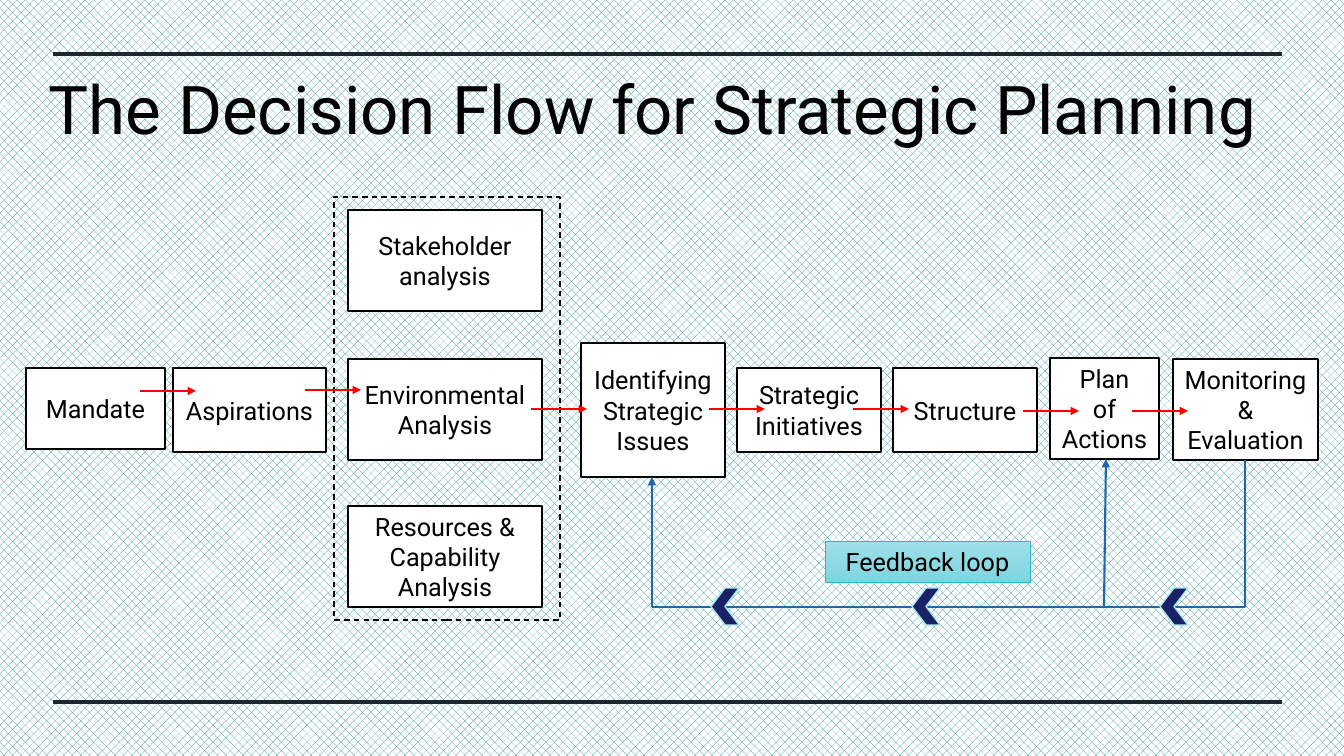
from typing import NamedTuple

from lxml.etree import SubElement
from pptx import Presentation
from pptx.dml.color import RGBColor
from pptx.enum.dml import MSO_LINE_DASH_STYLE as Dash, MSO_PATTERN_TYPE as Pattern
from pptx.enum.shapes import MSO_CONNECTOR_TYPE as Link, MSO_AUTO_SHAPE_TYPE as Preset
from pptx.enum.text import MSO_VERTICAL_ANCHOR as Anchor, PP_PARAGRAPH_ALIGNMENT as Align
from pptx.oxml.ns import qn
from pptx.util import Pt

SCALE = 914400 / 100.8  # EMU per px
FONT = "Roboto"
COLORS = {
    "ink": "000000", "paper": "FFFFFF", "hatch": "1C8B95", "rule": "1C2732",
    "flow": "FF0000", "loop": "2166AB", "chevron": "1A2166", "chevron_edge": "A3E8EE",
    "label_top": "9FDFE8", "label_bottom": "7ED5E1", "label_edge": "25BAC7",
}


class Box(NamedTuple):
    left: int
    top: int
    width: int
    height: int

    def inner(self, left, top, width, height):
        return Box(self.left + left, self.top + top, width, height)


def emu(*lengths):
    return [round(length * SCALE) for length in lengths]


def color(name):
    return RGBColor.from_string(COLORS[name])


def set_text(frame, lines, size, align):
    frame.word_wrap = True
    frame.text = "\n".join(lines)
    for para in frame.paragraphs:
        para.alignment = align
        para.font.name, para.font.size = FONT, Pt(size)
        para.font.color.rgb = color("ink")


def add_block(page, box, edge, fill=None, preset=Preset.RECTANGLE, weight=1):
    shape = page.shapes.add_shape(preset, *emu(*box))
    shape.shadow.inherit = False
    shape.line.color.rgb, shape.line.width = color(edge), Pt(weight)
    if fill:
        shape.fill.solid()
        shape.fill.fore_color.rgb = color(fill)
    else:
        shape.fill.background()
    return shape


def add_line(page, start, end, stroke, weight, arrow=False, kind=Link.STRAIGHT):
    line = page.shapes.add_connector(kind, *emu(*start, *end))
    line.line.color.rgb, line.line.width = color(stroke), Pt(weight)
    properties = line._element.spPr
    if arrow:
        SubElement(properties.find(qn("a:ln")), qn("a:tailEnd"), type="triangle")
    SubElement(properties, qn("a:effectLst"))
    return line


def add_step(page, box, *lines):
    shape = add_block(page, box, "ink", "paper")
    shape.text_frame.vertical_anchor = Anchor.MIDDLE
    set_text(shape.text_frame, lines, 18, Align.CENTER)


def draw_frame(page, box):
    """Hatched background and the rules above and below the content."""
    fill = page.background.fill
    fill.patterned()
    fill.pattern = Pattern.from_xml("pct40")
    fill.fore_color.rgb, fill.back_color.rgb = color("hatch"), color("paper")
    for y in (box.top, box.top + box.height):
        add_line(page, (box.left, y), (box.left + box.width, y), "rule", 2.25)


def draw_title(page, box):
    title = page.shapes.add_textbox(*emu(*box))
    set_text(title.text_frame, ["The Decision Flow for Strategic Planning"], 48, Align.LEFT)


def draw_analyses(page, box):
    """Dashed panel around the three analyses."""
    analyses = [
        (13, ["Stakeholder analysis"]),
        (162, ["Environmental Analysis"]),
        (309, ["Resources &", "Capability Analysis"]),
    ]
    for top, lines in analyses:
        add_step(page, box.inner(14, top, 194, 101), *lines)
    add_block(page, box, "ink").line.dash_style = Dash.DASH


def draw_steps(page, box):
    """Single steps on both sides of the analyses."""
    steps = [
        (0, 25, 139, 81, ["Mandate"]),
        (147, 25, 153, 84, ["Aspirations"]),
        (555, 0, 144, 134, ["Identifying Strategic Issues"]),
        (711, 25, 144, 84, ["Strategic Initiatives"]),
        (867, 25, 144, 84, ["Structure"]),
        (1024, 15, 109, 101, ["Plan", "of", "Actions"]),
        (1147, 16, 145, 101, ["Monitoring", "&", "Evaluation"]),
    ]
    for *place, lines in steps:
        add_step(page, box.inner(*place), *lines)


def draw_flow_arrows(page, box):
    length = 56
    arrows = [(114, 48), (279, 47), (505, 66), (683, 66), (827, 66), (997, 68), (1106, 68)]
    for left, top in arrows:
        x, y = box.left + left, box.top + top
        add_line(page, (x, y), (x + length, y), "flow", 1.5, arrow=True)


def draw_feedback_loop(page, box):
    left, top, width, height = box
    bottom = top + height

    # Elbow down and left: a two-leg bend laid out upright, then turned by 90 degrees
    corner_x = left + (width - height) / 2
    corner_y = top + (height - width) / 2
    elbow = add_line(page, (corner_x, corner_y), (corner_x + height, corner_y + width),
                     "loop", 1.75, kind=Link.ELBOW)
    properties = elbow._element.spPr
    properties.find(qn("a:prstGeom")).set("prst", "bentConnector2")
    properties.find(qn("a:xfrm")).set("rot", str(90 * 60000))

    # Returns to the issues and to the plan
    add_line(page, (left, bottom), (left, top + 17), "loop", 1.5, arrow=True)
    add_line(page, (left + 452, bottom), (left + 454, top - 1), "loop", 1.5, arrow=True)

    # Label
    label = add_block(page, box.inner(173, 81, 205, 41), "label_edge", weight=0.5)
    label.fill.gradient()
    label.fill.gradient_angle = 270
    for stop, name in zip(label.fill.gradient_stops, ("label_top", "label_bottom")):
        stop.color.rgb = color(name)
    label.text_frame.vertical_anchor = Anchor.TOP
    set_text(label.text_frame, ["Feedback loop"], 18, Align.CENTER)

    # Direction marks
    for x in (508, 260, 59):
        mark = add_block(page, box.inner(x, height - 19, 28, 37),
                         "chevron_edge", "chevron", Preset.CHEVRON)
        mark.rotation = 180


def main():
    deck = Presentation()
    deck.slide_width, deck.slide_height = emu(1344, 756)
    page = deck.slides.add_slide(deck.slide_layouts[6])
    flow = Box(26, 343, 1292, 134)
    draw_frame(page, Box(53, 54, 1229, 648))
    draw_steps(page, flow)
    draw_analyses(page, Box(334, 197, 226, 423))
    draw_feedback_loop(page, Box(652, 460, 593, 147))
    draw_flow_arrows(page, flow)
    draw_title(page, Box(39, 62, 1241, 92))
    deck.save("out.pptx")


if __name__ == "__main__":
    main()
